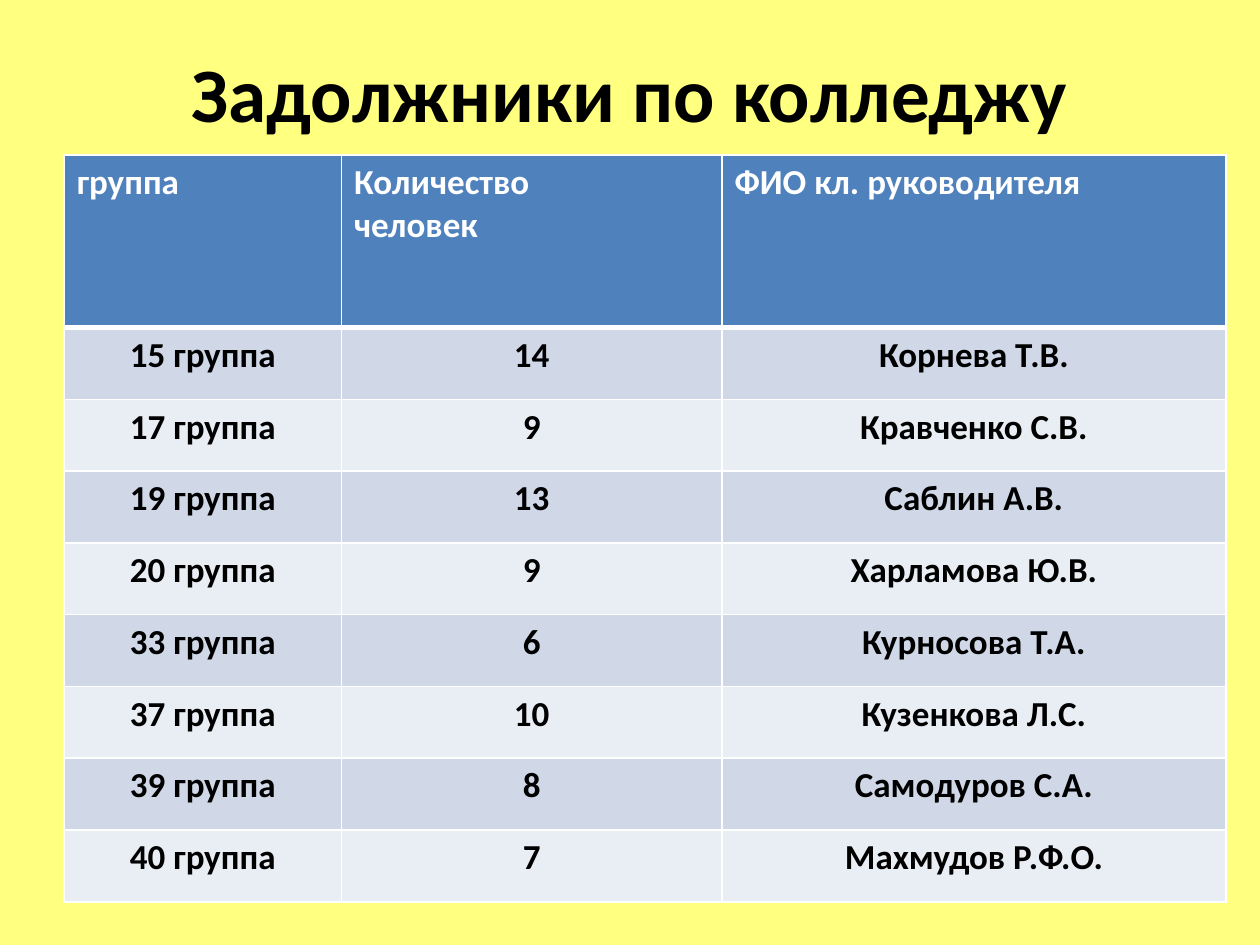
import lxml.etree
import pptx
import pptx.dml.color
import pptx.enum.text
import pptx.oxml.ns
import pptx.util

Inches = pptx.util.Inches
RGBColor = pptx.dml.color.RGBColor
Alignment = pptx.enum.text.PP_ALIGN

BACKGROUND = RGBColor(0xFF, 0xFF, 0x80)
BLACK = RGBColor(0x00, 0x00, 0x00)
WHITE = RGBColor(0xFF, 0xFF, 0xFF)
HEADER_BLUE = RGBColor(0x4F, 0x81, 0xBD)
BANDS = (RGBColor(0xD0, 0xD8, 0xE8), RGBColor(0xE9, 0xED, 0xF4))

FONT = "Calibri"
COLUMN_WIDTHS = (2.2, 3.02, 4)
HEADER_HEIGHT = 1.37
ROW_HEIGHT = 0.57

HEADERS = ("группа", "Количество\nчеловек", "ФИО кл. руководителя")
DEBTORS = (
    (15, 14, "Корнева Т.В."),
    (17, 9, "Кравченко С.В."),
    (19, 13, "Саблин А.В."),
    (20, 9, "Харламова Ю.В."),
    (33, 6, "Курносова Т.А."),
    (37, 10, "Кузенкова Л.С."),
    (39, 8, "Самодуров С.А."),
    (40, 7, "Махмудов Р.Ф.О."),
)


def write_text(text_frame, text, size, color, alignment):
    for index, line in enumerate(text.split("\n")):
        paragraph = text_frame.paragraphs[0] if index == 0 else text_frame.add_paragraph()
        paragraph.alignment = alignment
        run = paragraph.add_run()
        run.text = line
        run.font.name = FONT
        run.font.size = pptx.util.Pt(size)
        run.font.bold = True
        run.font.color.rgb = color


def add_title(slide, text):
    title = slide.shapes.add_textbox(Inches(0.5), Inches(0.3), Inches(9), Inches(0.85))
    title.text_frame.word_wrap = True
    title.text_frame.vertical_anchor = pptx.enum.text.MSO_ANCHOR.MIDDLE
    write_text(title.text_frame, text, 44, BLACK, Alignment.CENTER)


def set_borders(cell, widths):
    properties = cell._tc.get_or_add_tcPr()
    qualify = pptx.oxml.ns.qn
    for side, width in widths.items():
        line = lxml.etree.SubElement(
            properties, qualify(f"a:ln{side}"), w=str(pptx.util.Pt(width))
        )
        fill = lxml.etree.SubElement(line, qualify("a:solidFill"))
        lxml.etree.SubElement(fill, qualify("a:srgbClr"), val=str(WHITE))


def fill_row(table, row_index, texts, background, color, alignment):
    top = 3 if row_index == 1 else 1
    bottom = 3 if row_index == 0 else 1
    for column_index, text in enumerate(texts):
        cell = table.cell(row_index, column_index)
        set_borders(cell, {"L": 1, "R": 1, "T": top, "B": bottom})
        cell.fill.solid()
        cell.fill.fore_color.rgb = background
        write_text(cell.text_frame, text, 20, color, alignment)


def add_debtors_table(slide):
    height = HEADER_HEIGHT + ROW_HEIGHT * len(DEBTORS)
    table = slide.shapes.add_table(
        len(DEBTORS) + 1, len(HEADERS),
        Inches(0.51), Inches(1.23), Inches(sum(COLUMN_WIDTHS)), Inches(height),
    ).table
    for column, width in zip(table.columns, COLUMN_WIDTHS):
        column.width = Inches(width)
    for index, row in enumerate(table.rows):
        row.height = Inches(ROW_HEIGHT if index else HEADER_HEIGHT)

    fill_row(table, 0, HEADERS, HEADER_BLUE, WHITE, Alignment.LEFT)
    for index, (group, count, teacher) in enumerate(DEBTORS):
        texts = (f"{group} группа", str(count), teacher)
        fill_row(table, index + 1, texts, BANDS[index % 2], BLACK, Alignment.CENTER)


def main():
    presentation = pptx.Presentation()
    presentation.slide_width = Inches(10)
    presentation.slide_height = Inches(7.5)
    slide = presentation.slides.add_slide(presentation.slide_layouts[6])
    slide.background.fill.solid()
    slide.background.fill.fore_color.rgb = BACKGROUND
    add_title(slide, "Задолжники по колледжу")
    add_debtors_table(slide)
    presentation.save("out.pptx")


if __name__ == "__main__":
    main()
